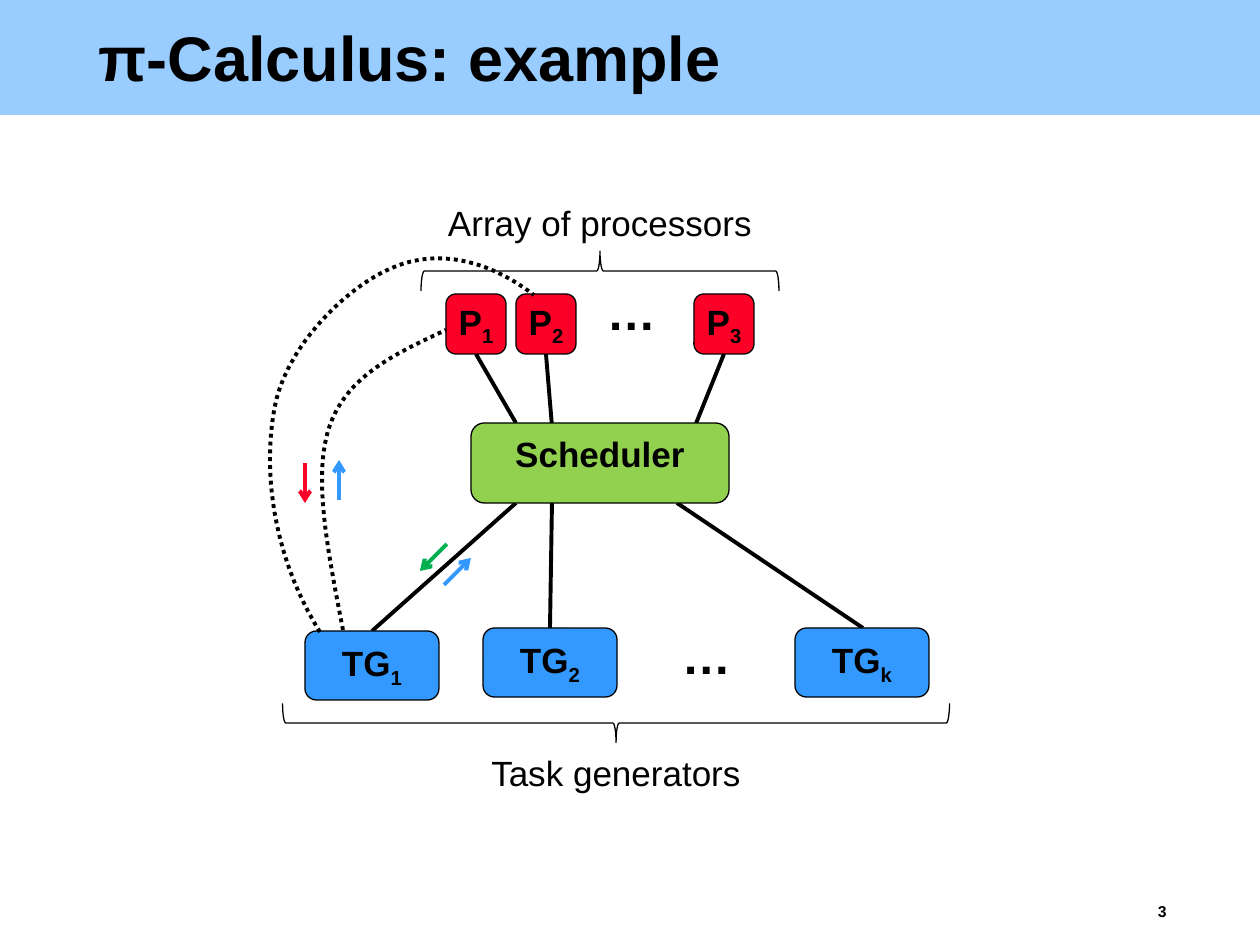
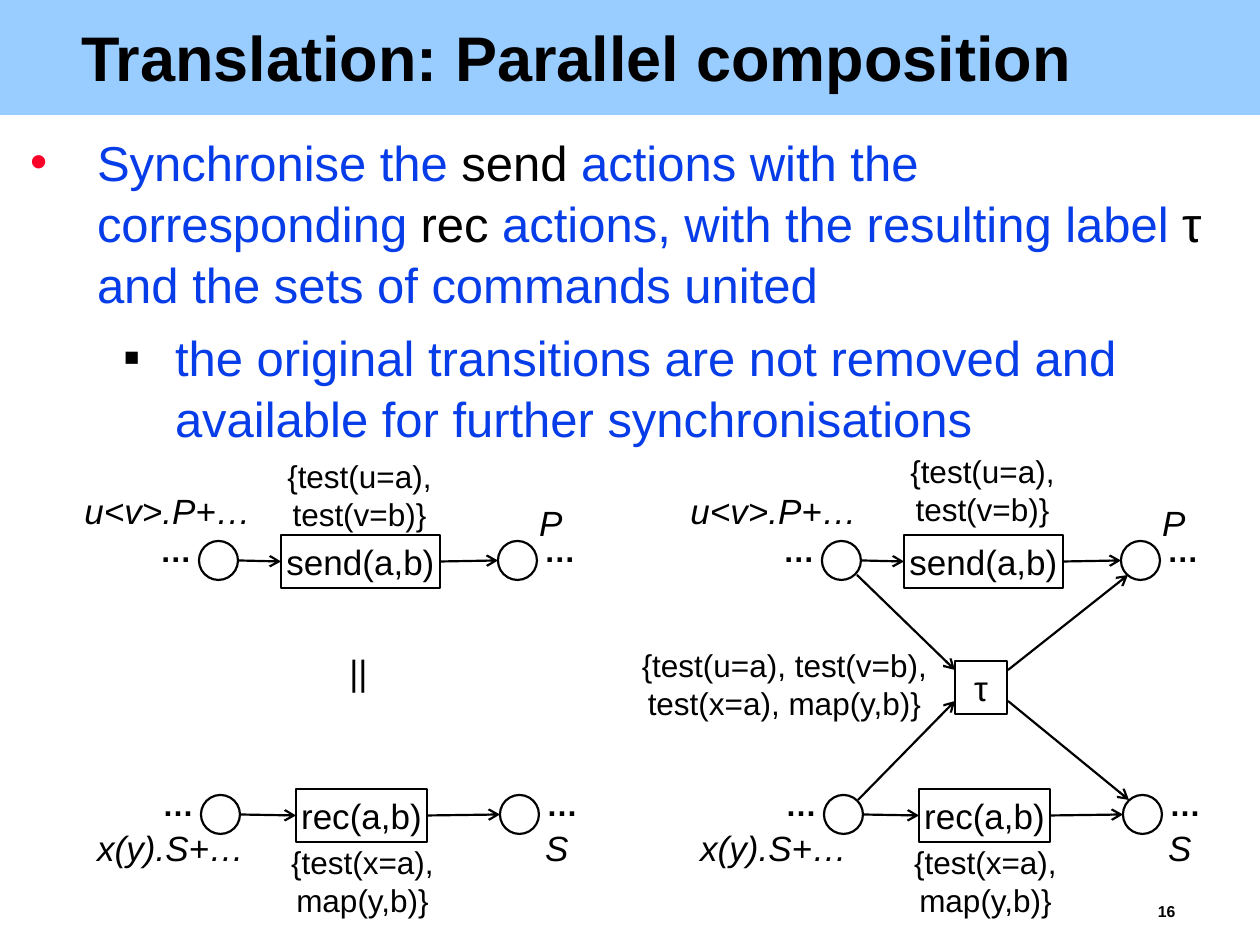
from lxml.etree import SubElement
from pptx import Presentation
from pptx.dml.color import RGBColor
from pptx.enum.dml import MSO_LINE
from pptx.enum.shapes import MSO_CONNECTOR, MSO_SHAPE
from pptx.enum.text import MSO_ANCHOR, MSO_AUTO_SIZE, PP_ALIGN
from pptx.oxml.ns import qn
from pptx.util import Emu, Pt

EMU_PER_PX = 914400 / 126
FONT = "Arial"
BLACK, BAND, RED, GREEN, BLUE = "000000", "99CCFF", "FC0128", "92D050", "3399FF"
ARROW_GREEN, BODY_BLUE = "00B050", "063DE8"
TITLE_ONLY, TITLE_AND_BODY = 5, 1
STATE = 39       # diameter of a state circle
RIGHT = 623      # distance between the two automata
ROWS = [
    dict(x=199, y=541, action="send(a,b)", box=(281, 159), before=" u<v>.P+…",
         before_x=(44, 650), before_y=483, after=" P", after_at=(504, 495),
         tests=["{test(u=a),", "test(v=b)}"], tests_x=286, tests_y=(457, 452)),
    dict(x=201, y=795, action="rec(a,b)", box=(296, 131), before=" x(y).S+…",
         before_x=(47, 650), before_y=820, after=" S", after_at=(510, 820),
         tests=["{test(x=a),", "map(y,b)}"], tests_x=289, tests_y=(843, 843)),
]


def px(n):
    return Emu(round(n * EMU_PER_PX))


def rgb(color):
    return RGBColor.from_string(color)


def add_run(p, text, size=20, color=BLACK, bold=False, italic=False, sub=False):
    r = p.add_run()
    r.text = text
    r.font.name, r.font.size = FONT, Pt(size)
    r.font.bold, r.font.italic = bold, italic
    r.font.color.rgb = rgb(color)
    if sub:
        r.font._element.set("baseline", "-25000")


def set_frame(tf, inset=(13, 6), anchor=MSO_ANCHOR.TOP, wrap=True):
    tf.auto_size = MSO_AUTO_SIZE.NONE
    tf.word_wrap = wrap
    tf.vertical_anchor = anchor
    tf.margin_left = tf.margin_right = px(inset[0])
    tf.margin_top = tf.margin_bottom = px(inset[1])


def place(sp, x, y, w, h):
    sp.left, sp.top, sp.width, sp.height = px(x), px(y), px(w), px(h)


def add_text(s, x, y, w, h, lines, align=PP_ALIGN.CENTER, inset=(13, 6),
             wrap=True, spacing=None, **fmt):
    """Add a text box with one paragraph for each of the lines."""
    tf = s.shapes.add_textbox(px(x), px(y), px(w), px(h)).text_frame
    set_frame(tf, inset, wrap=wrap)
    for i, line in enumerate(lines):
        p = tf.paragraphs[0] if i == 0 else tf.add_paragraph()
        p.alignment = align
        p.line_spacing = spacing
        add_run(p, line, **fmt)


def add_shape(s, kind, x, y, w, h, fill=None, line=BLACK, width=0.75):
    sp = s.shapes.add_shape(kind, px(x), px(y), px(w), px(h))
    style_shape(sp, fill, line, width)
    return sp


def style_shape(sp, fill, line, width):
    sp.shadow.inherit = False
    if fill:
        sp.fill.solid()
        sp.fill.fore_color.rgb = rgb(fill)
    else:
        sp.fill.background()
    if line:
        sp.line.color.rgb = rgb(line)
        sp.line.width = Pt(width)
    else:
        sp.line.fill.background()


def add_node(s, x, y, w, h, fill, label, sub="", inset=(0, 0),
             anchor=MSO_ANCHOR.MIDDLE):
    sp = add_shape(s, MSO_SHAPE.ROUNDED_RECTANGLE, x, y, w, h, fill)
    set_frame(sp.text_frame, inset, anchor)
    p = sp.text_frame.paragraphs[0]
    p.alignment = PP_ALIGN.CENTER
    add_run(p, label, bold=True)
    if sub:
        add_run(p, sub, bold=True, sub=True)


def add_action(s, x, y, w, h, label):
    sp = add_shape(s, MSO_SHAPE.RECTANGLE, x, y, w, h, width=1.25)
    set_frame(sp.text_frame, (5, 5), MSO_ANCHOR.MIDDLE, wrap=False)
    p = sp.text_frame.paragraphs[0]
    p.alignment = PP_ALIGN.CENTER
    add_run(p, label)


def add_line(s, x1, y1, x2, y2, color=BLACK, width=2.25, arrow=False):
    c = s.shapes.add_connector(MSO_CONNECTOR.STRAIGHT,
                               px(x1), px(y1), px(x2), px(y2))
    c.line.color.rgb = rgb(color)
    c.line.width = Pt(width)
    if arrow:
        SubElement(c.line._get_or_add_ln(), qn("a:tailEnd"), type="arrow")
    SubElement(c._element.spPr, qn("a:effectLst"))


def add_brace(s, cx, cy, span, depth, rotation):
    """Add a brace turned on its side, centred on (cx, cy)."""
    sp = add_shape(s, MSO_SHAPE.RIGHT_BRACE, cx - depth / 2, cy - span / 2,
                   depth, span)
    sp.rotation = rotation


def bezier(a, b, c, d, steps=24):
    for i in range(1, steps + 1):
        t = i / steps
        u = 1 - t
        yield tuple(px(u**3 * m + 3 * u * u * t * n + 3 * u * t * t * o + t**3 * q)
                    for m, n, o, q in zip(a, b, c, d))


def add_dotted_curve(s, points):
    """Draw joined cubic curves; points are a start and then three per curve."""
    builder = s.shapes.build_freeform(px(points[0][0]), px(points[0][1]))
    for i in range(0, len(points) - 1, 3):
        builder.add_line_segments(bezier(*points[i:i + 4]), close=False)
    sp = builder.convert_to_shape()
    style_shape(sp, None, BLACK, 2.25)
    sp.line.dash_style = MSO_LINE.ROUND_DOT


def new_slide(prs, layout, title, number):
    s = prs.slides.add_slide(prs.slide_layouts[layout])
    band = add_shape(s, MSO_SHAPE.RECTANGLE, 0, 0, 1260, 115, BAND, None)
    s.shapes._spTree.insert(2, band._element)
    place(s.shapes.title, 73, 26, 1113, 72)
    tf = s.shapes.title.text_frame
    set_frame(tf, (8, 3))
    p = tf.paragraphs[0]
    p.alignment = PP_ALIGN.LEFT
    p.line_spacing = 0.87
    add_run(p, title, size=36, bold=True)
    add_text(s, 1150, 900, 40, 24, [number], PP_ALIGN.LEFT, (8, 3),
             spacing=0.97, size=9, bold=True)
    return s


def add_bullet(p, runs, bullet, color, left, hanging):
    p.alignment = PP_ALIGN.LEFT
    p.line_spacing = 1.04
    p.space_before = Pt(6.6)
    pPr = p._p.get_or_add_pPr()
    pPr.set("marL", str(px(left)))
    pPr.set("indent", str(px(-hanging)))
    SubElement(SubElement(pPr, qn("a:buClr")), qn("a:srgbClr"), val=color)
    SubElement(pPr, qn("a:buFont"), typeface=FONT)
    SubElement(pPr, qn("a:buChar"), char=bullet)
    for text, run_color in runs:
        add_run(p, text, size=28, color=run_color)


def add_transition(s, row, side):
    """Draw one row, state to action to state; side is 0 (left) or 1 (right)."""
    dx = side * RIGHT
    x, y, mid = row["x"] + dx, row["y"], row["y"] + STATE / 2
    target = x + 299
    box_x, box_w = row["box"][0] + dx, row["box"][1]
    for state_x in (x, target):
        add_shape(s, MSO_SHAPE.OVAL, state_x, y, STATE, STATE, width=1.25)
    add_line(s, x + STATE, mid, box_x, mid + 1, width=1.25, arrow=True)
    add_line(s, box_x + box_w, mid + 1, target, mid, width=1.25, arrow=True)
    add_action(s, box_x, y - 6, box_w, 53, row["action"])
    for dots_x in (x - 39, x + 345):
        add_text(s, dots_x, y - 10, 32, 38, ["…"], inset=(0, 0), wrap=False,
                 size=18, bold=True)
    add_text(s, row["tests_x"] + dx, row["tests_y"][side], 147, 77, row["tests"],
             inset=(0, 0), wrap=False, size=18)
    add_text(s, row["before_x"][side], row["before_y"], 238, 55, [row["before"]],
             italic=True)
    after_x, after_y = row["after_at"]
    add_text(s, after_x + dx, after_y, 84, 55, [row["after"]], italic=True)


def build_example(prs):
    s = new_slide(prs, TITLE_ONLY, " π-Calculus: example", "3")
    for line in [(476, 354, 516, 423), (546, 354, 552, 426), (724, 354, 695, 426),
                 (372, 631, 516, 503), (550, 628, 552, 503), (863, 628, 677, 503)]:
        add_line(s, *line)
    for x, sub in [(446, "1"), (516, "2"), (694, "3")]:
        add_node(s, x, 294, 60, 60, RED, "P", sub)
    add_node(s, 471, 423, 258, 80, GREEN, "Scheduler", inset=(13, 6),
             anchor=MSO_ANCHOR.TOP)
    for x, y, sub in [(305, 631, "1"), (483, 628, "2"), (795, 628, "k")]:
        add_node(s, x, y, 134, 69, BLUE, "TG", sub)
    for x, y in [(587, 275), (662, 619)]:
        add_text(s, x, y, 89, 72, ["…"], size=28, bold=True)

    add_brace(s, 600, 271, 358, 40, 270)
    add_brace(s, 616, 723, 667, 39, 90)
    add_text(s, 421, 195, 358, 55, ["Array of processors"])
    add_text(s, 437, 745, 358, 55, ["Task generators"])

    add_dotted_curve(s, [(343, 630), (328, 552), (312, 475), (330, 425),
                         (348, 375), (397, 353), (446, 330)])
    add_dotted_curve(s, [(320, 632), (271, 553), (263, 467), (275, 406),
                         (287, 345), (348, 286), (392, 268),
                         (435, 249), (486, 258), (534, 295)])
    for x1, y1, x2, y2, color in [(444, 585, 471, 558, BLUE),
                                  (447, 544, 420, 571, ARROW_GREEN),
                                  (339, 500, 339, 460, BLUE),
                                  (305, 463, 305, 503, RED)]:
        add_line(s, x1, y1, x2, y2, color, arrow=True)


def build_composition(prs):
    s = new_slide(prs, TITLE_AND_BODY, "Translation: Parallel composition", "16")
    body = s.placeholders[1]
    place(body, 20, 125, 1226, 804)
    tf = body.text_frame
    set_frame(tf, (10, 5))
    add_bullet(tf.paragraphs[0], [
        ("Synchronise the ", BODY_BLUE), ("send ", BLACK),
        ("actions with the corresponding ", BODY_BLUE), ("rec", BLACK),
        (" actions, with the resulting label ", BODY_BLUE), ("τ", BLACK),
        (" and the sets of commands united", BODY_BLUE)], "•", RED, 67, 67)
    p = tf.add_paragraph()
    p.level = 1
    add_bullet(p, [("the original transitions are not removed and available "
                    "for further synchronisations", BODY_BLUE)],
               "▪", BLACK, 145, 52)

    for side in (0, 1):
        for row in ROWS:
            add_transition(s, row, side)
    add_text(s, 239, 644, 238, 55, ["||"], italic=True)
    add_action(s, 955, 661, 52, 53, "τ")
    for line in [(857, 575, 955, 670), (858, 800, 955, 701),
                 (1008, 670, 1128, 575), (1008, 701, 1129, 800)]:
        add_line(s, *line, width=1.25, arrow=True)
    add_text(s, 639, 646, 291, 77,
             ["{test(u=a), test(v=b),", "test(x=a), map(y,b)}"],
             inset=(0, 0), size=18)


def main():
    prs = Presentation()
    prs.slide_width, prs.slide_height = px(1260), px(945)
    build_example(prs)
    build_composition(prs)
    prs.save("out.pptx")


if __name__ == "__main__":
    main()
